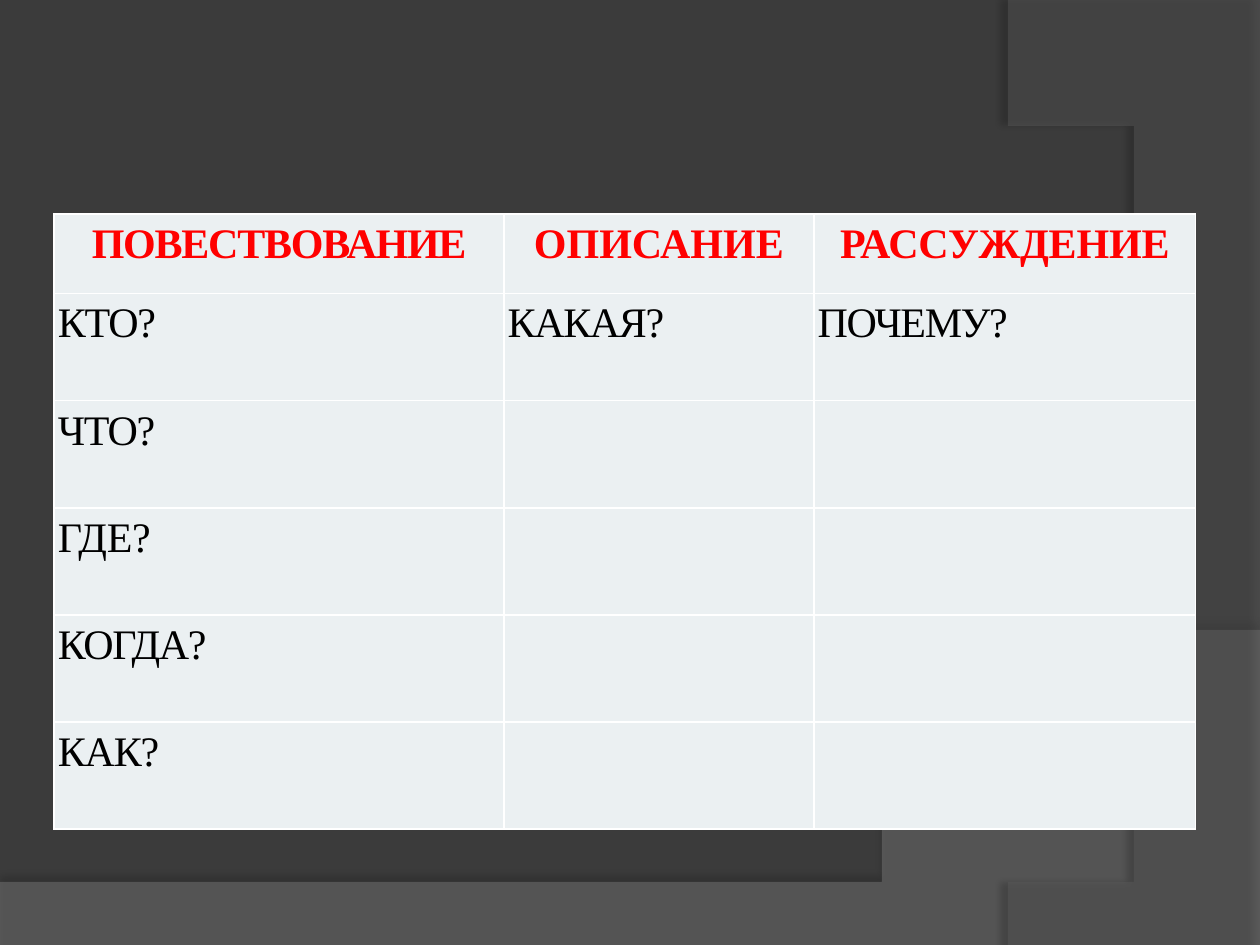
from dataclasses import dataclass

from lxml.etree import SubElement
from pptx import Presentation
from pptx.dml.color import RGBColor
from pptx.enum.text import PP_ALIGN
from pptx.oxml import parse_xml
from pptx.oxml.ns import nsdecls, qn
from pptx.util import Inches, Pt


@dataclass(frozen=True)
class Theme:
    background: str = "3B3B3B"
    lower_wave: str = "7F7F7F"
    right_wave: str = "5E5E5E"
    cell: str = "EBF0F2"
    border: str = "FFFFFF"
    heading: str = "FF0000"
    body: str = "000000"
    font: str = "Times New Roman"
    size: int = 24


def curve(start, control_1, control_2, end, steps=60):
    """Return points along a cubic Bezier curve, without its start."""
    points = []
    for step in range(1, steps + 1):
        t = step / steps
        u = 1 - t
        points.append(tuple(
            u**3 * a + 3 * u * u * t * b + 3 * u * t * t * c + t**3 * d
            for a, b, c, d in zip(start, control_1, control_2, end)))
    return points


def add_wave(slide, points, color, opacity, shadow_opacity, distance, direction):
    """Add a translucent outline shape with a soft shadow."""
    builder = slide.shapes.build_freeform(*points[0], scale=Inches(1))
    builder.add_line_segments(points[1:], close=True)
    shape = builder.convert_to_shape()
    shape.fill.solid()
    shape.fill.fore_color.rgb = RGBColor.from_string(color)
    color_element = shape.fill._xPr.find(qn("a:solidFill"))[0]
    SubElement(color_element, qn("a:alpha"), val=str(opacity * 1000))
    shape.line.fill.background()
    shape._element.spPr.append(parse_xml(
        f'<a:effectLst {nsdecls("a")}><a:outerShdw blurRad="{Pt(4)}" '
        f'dist="{Pt(distance)}" dir="{direction * 60000}" rotWithShape="0">'
        f'<a:srgbClr val="000000"><a:alpha val="{shadow_opacity * 1000}"/>'
        '</a:srgbClr></a:outerShdw></a:effectLst>'))


theme = Theme()
WIDTH, HEIGHT = 10, 7.5
presentation = Presentation()
presentation.slide_width = Inches(WIDTH)
presentation.slide_height = Inches(HEIGHT)
slide = presentation.slides.add_slide(presentation.slide_layouts[6])
slide.background.fill.solid()
slide.background.fill.fore_color.rgb = RGBColor.from_string(theme.background)

# Background waves
lower_wave = [(0, 7.05), (0, HEIGHT), (WIDTH, HEIGHT), (WIDTH, 5.2)]
lower_wave += curve((WIDTH, 5.2), (5.59, 7.29), (3.91, 7.19), (0, 7.05))
add_wave(slide, lower_wave, theme.lower_wave, 45, 35, 3.5, 270)

right_wave = [(WIDTH, 0.02), (WIDTH, HEIGHT), (8.21, HEIGHT)]
right_wave += curve((8.21, HEIGHT), (9.35, 6.19), (10.18, 3), (8, 0))
add_wave(slide, right_wave, theme.right_wave, 40, 45, 4, 180)

# Questions for each type of text: wording and letter spacing in points
rows = [
    [("ПОВЕСТВОВАНИЕ", -0.7), ("ОПИСАНИЕ", 0), ("РАССУЖДЕНИЕ", -0.1)],
    [("КТО?", -0.8), ("КАКАЯ?", -0.8), ("ПОЧЕМУ?", -0.8)],
    [("ЧТО?", -0.8)],
    [("ГДЕ?", -0.1)],
    [("КОГДА?", -0.8)],
    [("КАК?", -0.7)],
]
column_widths = [3.57, 2.46, 3.03]
row_heights = [0.63] + [0.85] * (len(rows) - 1)
table = slide.shapes.add_table(
    len(rows), len(column_widths), Inches(0.43), Inches(1.7),
    Inches(sum(column_widths)), Inches(sum(row_heights))).table
table.first_row = table.horz_banding = False
for column, width in zip(table.columns, column_widths):
    column.width = Inches(width)
for row, height in zip(table.rows, row_heights):
    row.height = Inches(height)

for cell in table.iter_cells():
    cell.margin_left = cell.margin_right = Inches(0.03)
    cell.margin_top = cell.margin_bottom = 0
    properties = cell._tc.get_or_add_tcPr()
    for side in ("lnL", "lnR", "lnT", "lnB"):
        properties.append(parse_xml(
            f'<a:{side} {nsdecls("a")} w="{Pt(1)}"><a:solidFill>'
            f'<a:srgbClr val="{theme.border}"/></a:solidFill></a:{side}>'))
    cell.fill.solid()
    cell.fill.fore_color.rgb = RGBColor.from_string(theme.cell)

for row_index, entries in enumerate(rows):
    is_heading = row_index == 0
    for column_index, (text, spacing) in enumerate(entries):
        paragraph = table.cell(row_index, column_index).text_frame.paragraphs[0]
        run = paragraph.add_run()
        run.text = text
        run.font._element.set("spc", str(round(spacing * 100)))
        paragraph.alignment = PP_ALIGN.CENTER if is_heading else PP_ALIGN.LEFT
        paragraph.line_spacing = 1.15
        paragraph.font.name = theme.font
        paragraph.font.size = Pt(theme.size)
        paragraph.font.bold = is_heading
        paragraph.font.color.rgb = RGBColor.from_string(
            theme.heading if is_heading else theme.body)

presentation.save("out.pptx")
